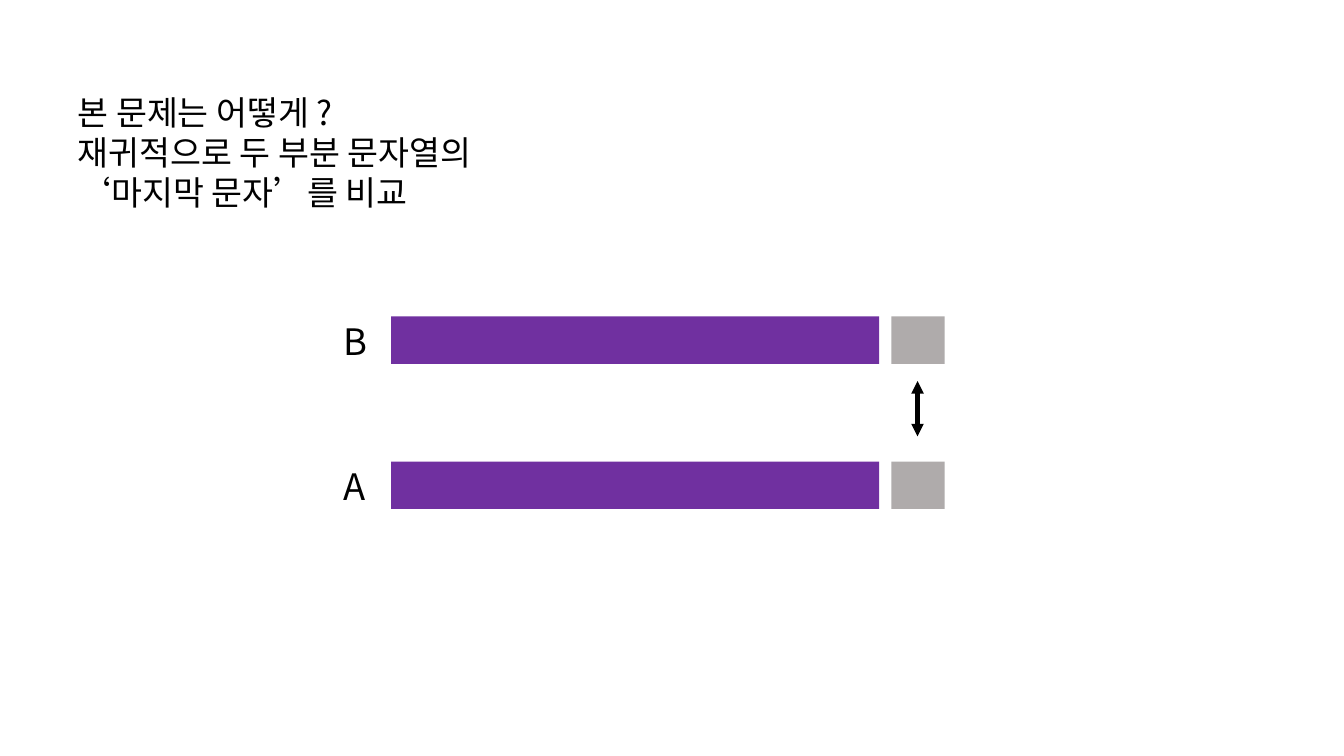
from dataclasses import dataclass

from lxml.etree import SubElement
from pptx import Presentation
from pptx.dml.color import RGBColor
from pptx.enum.shapes import MSO_CONNECTOR, MSO_SHAPE
from pptx.enum.text import MSO_ANCHOR, MSO_AUTO_SIZE, PP_ALIGN
from pptx.oxml.ns import qn
from pptx.slide import Slide
from pptx.text.text import TextFrame
from pptx.util import Inches, Pt

COLORS = {"text": "000000", "prefix": "7030A0", "last": "AFABAB"}
FONT = "Noto Sans CJK KR"
TITLE_LINES = [
    "본 문제는 어떻게 ?",
    "재귀적으로 두 부분 문자열의",
    "‘마지막 문자’를 비교",
]


@dataclass
class StringRow:
    label: str
    top: float


@dataclass
class Segment:
    left: float
    width: float
    color: str


ROWS = [StringRow("B", 3.14), StringRow("A", 4.58)]
SEGMENTS = [Segment(3.88, 4.84, "prefix"), Segment(8.84, 0.53, "last")]
BAR_HEIGHT = 0.47


def rgb(name: str) -> RGBColor:
    return RGBColor.from_string(COLORS[name])


def write_lines(tf: TextFrame, lines: list[str], size: int) -> None:
    tf.word_wrap = True
    tf.auto_size = MSO_AUTO_SIZE.NONE
    tf.vertical_anchor = MSO_ANCHOR.TOP
    for i, line in enumerate(lines):
        p = tf.add_paragraph() if i else tf.paragraphs[0]
        p.alignment = PP_ALIGN.LEFT
        p.line_spacing = Pt(size * 1.2)
        p.space_before = Pt(0)
        r = p.add_run()
        r.text = line
        r.font.size = Pt(size)
        r.font.name = FONT
        r.font.color.rgb = rgb("text")
        SubElement(r.font._element, qn("a:ea"), typeface=FONT)


def add_title(s: Slide) -> None:
    sp = s.shapes.title
    sp.left, sp.top = Inches(0.67), Inches(0.86)
    sp.width, sp.height = Inches(5.2), Inches(1.31)
    write_lines(sp.text_frame, TITLE_LINES, 24)


def add_row(s: Slide, row: StringRow) -> None:
    for seg in SEGMENTS:
        sp = s.shapes.add_shape(
            MSO_SHAPE.RECTANGLE, Inches(seg.left), Inches(row.top),
            Inches(seg.width), Inches(BAR_HEIGHT),
        )
        sp.shadow.inherit = False
        sp.fill.solid()
        sp.fill.fore_color.rgb = rgb(seg.color)
        sp.line.fill.background()
    box = s.shapes.add_textbox(
        Inches(3.31), Inches(row.top - 0.02), Inches(0.45), Inches(0.54)
    )
    write_lines(box.text_frame, [row.label], 26)


def add_compare_arrow(s: Slide) -> None:
    arrow = s.shapes.add_connector(
        MSO_CONNECTOR.STRAIGHT,
        Inches(9.1), Inches(3.78), Inches(9.1), Inches(4.33),
    )
    arrow.line.color.rgb = rgb("text")
    arrow.line.width = Pt(3)
    ln = arrow.line._get_or_add_ln()
    for end in ("a:headEnd", "a:tailEnd"):
        SubElement(ln, qn(end), type="triangle")
    SubElement(arrow._element.spPr, qn("a:effectLst"))


def main() -> None:
    prs = Presentation()
    prs.slide_width, prs.slide_height = Inches(13.33), Inches(7.5)
    s = prs.slides.add_slide(prs.slide_layouts[5])
    add_title(s)
    for row in ROWS:
        add_row(s, row)
    add_compare_arrow(s)
    prs.save("out.pptx")


if __name__ == "__main__":
    main()
